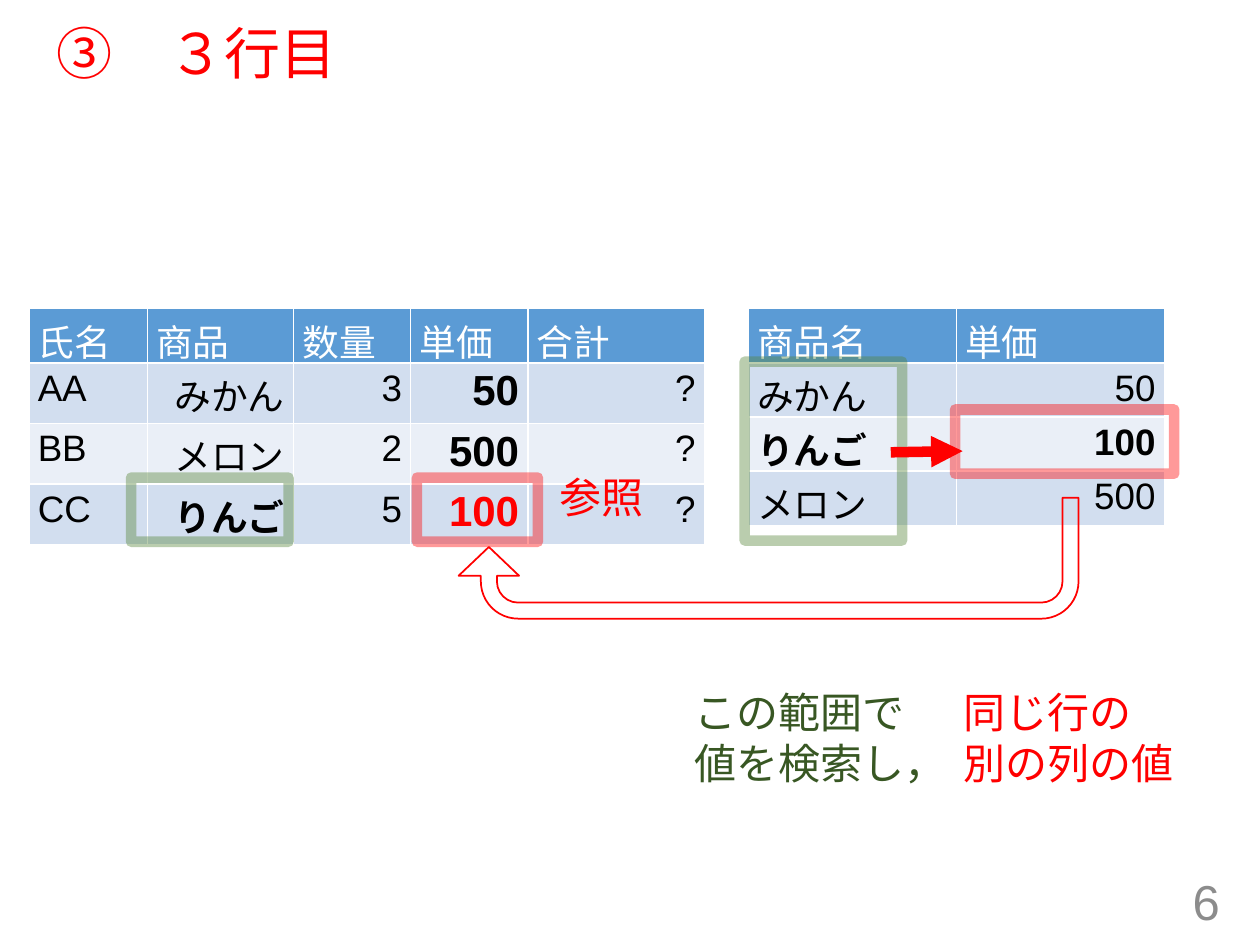
"""Build the slide that explains looking up a unit price for the third row."""
from dataclasses import dataclass

import lxml.etree
import pptx
import pptx.dml.color
import pptx.enum.shapes
import pptx.enum.text
import pptx.oxml.ns
import pptx.util

Inches = pptx.util.Inches
Align = pptx.enum.text.PP_ALIGN
Anchor = pptx.enum.text.MSO_ANCHOR
Shape = pptx.enum.shapes.MSO_SHAPE


@dataclass(frozen=True)
class Theme:
    """Colours and type sizes of the slide."""
    font: str = "Arial"
    red: str = "FF0000"
    green: str = "548235"
    dark_green: str = "385723"
    grey: str = "8C8C8C"
    black: str = "000000"
    white: str = "FFFFFF"
    header: str = "5B9BD5"
    bands: tuple[str, str] = ("D2DEEF", "EAEFF7")
    title: int = 32
    number: int = 28
    label: int = 24
    cell: int = 21


@dataclass(frozen=True)
class Area:
    """A rectangle in inches."""
    left: float
    top: float
    width: float
    height: float

    def lengths(self) -> tuple:
        """Return the position and size as lengths."""
        return tuple(Inches(v) for v in (self.left, self.top, self.width, self.height))


@dataclass(frozen=True)
class Grid:
    """A table with its measures and the cells that stand out."""
    left: float
    columns: tuple[float, ...]
    row_height: float
    rows: tuple[tuple[str, ...], ...]
    left_columns: tuple[int, ...]
    bold: tuple[tuple[int, int], ...]
    large_column: int | None = None
    red: tuple[tuple[int, int], ...] = ()


@dataclass(frozen=True)
class Frame:
    """A translucent outline that marks cells."""
    area: Area
    color: str


@dataclass(frozen=True)
class Label:
    """A text box, with one paragraph for each line."""
    area: Area
    text: str
    color: str


THEME = Theme()
TABLE_TOP = 2.45
HEADER_HEIGHT = 0.42

GRIDS = (
    Grid(5.94, (1.65, 1.65), 0.42,
         (("商品名", "単価"), ("みかん", "50"), ("りんご", "100"), ("メロン", "500")),
         left_columns=(0,), bold=((2, 0), (2, 1))),
    Grid(0.23, (0.94, 1.16, 0.93, 0.93, 1.4), 0.47,
         (("氏名", "商品", "数量", "単価", "合計"),
          ("AA", "みかん", "3", "50", "?"),
          ("BB", "メロン", "2", "500", "?"),
          ("CC", "りんご", "5", "100", "?")),
         left_columns=(0,), bold=((1, 3), (2, 3), (3, 3), (3, 1)),
         large_column=3, red=((3, 3),)),
)
FRAMES = (
    Frame(Area(7.58, 3.25, 1.74, 0.51), THEME.red),
    Frame(Area(3.31, 3.79, 0.96, 0.51), THEME.red),
    Frame(Area(1.04, 3.79, 1.25, 0.51), THEME.green),
    Frame(Area(5.91, 2.87, 1.25, 1.42), THEME.green),
)
LABELS = (
    Label(Area(5.41, 5.4, 2.22, 0.91), "この範囲で\n値を検索し，", THEME.dark_green),
    Label(Area(7.55, 5.4, 1.88, 0.91), "同じ行の\n別の列の値", THEME.red),
    Label(Area(4.34, 3.69, 0.88, 0.5), "参照", THEME.red),
)


def rgb(color: str) -> pptx.dml.color.RGBColor:
    """Return a colour object for a hex value."""
    return pptx.dml.color.RGBColor.from_string(color)


def write(frame, text: str, *, size: int, color: str, bold: bool = False,
          align=Align.LEFT, spacing: float | None = None) -> None:
    """Fill a text frame with formatted paragraphs."""
    frame.text = text
    for para in frame.paragraphs:
        para.alignment = align
        para.line_spacing = spacing
        for span in para.runs:
            span.font.name = THEME.font
            span.font.size = pptx.util.Pt(size)
            span.font.bold = bold
            span.font.color.rgb = rgb(color)


def child(parent, tag: str, **attributes: str):
    """Append a drawing element to its parent."""
    return lxml.etree.SubElement(parent, pptx.oxml.ns.qn(tag), **attributes)


def set_line(shape, color: str, width: float) -> None:
    """Give a shape or connector a solid line."""
    shape.line.color.rgb = rgb(color)
    shape.line.width = pptx.util.Pt(width)


def add_outline(page, kind, area: Area, color: str, width: float):
    """Add a preset shape that has a line and no fill."""
    shape = page.shapes.add_shape(kind, *area.lengths())
    shape.shadow.inherit = False
    shape.fill.background()
    set_line(shape, color, width)
    return shape


def add_grid(page, grid: Grid) -> None:
    """Draw a banded table."""
    height = HEADER_HEIGHT + grid.row_height * (len(grid.rows) - 1)
    area = Area(grid.left, TABLE_TOP, sum(grid.columns), height)
    table = page.shapes.add_table(len(grid.rows), len(grid.columns), *area.lengths()).table
    for column, width in zip(table.columns, grid.columns):
        column.width = Inches(width)
    for r, values in enumerate(grid.rows):
        table.rows[r].height = Inches(grid.row_height if r else HEADER_HEIGHT)
        for c, value in enumerate(values):
            cell = table.cell(r, c)
            cell.margin_left = cell.margin_right = Inches(0.07)
            cell.margin_top = cell.margin_bottom = Inches(0.04)
            cell.fill.solid()
            cell.fill.fore_color.rgb = rgb(THEME.bands[(r - 1) % 2] if r else THEME.header)
            body_color = THEME.red if (r, c) in grid.red else THEME.black
            write(cell.text_frame, value,
                  size=THEME.label if r and c == grid.large_column else THEME.cell,
                  color=body_color if r else THEME.white,
                  bold=(r, c) in grid.bold,
                  align=Align.RIGHT if r and c not in grid.left_columns else Align.LEFT)


def add_frame(page, frame: Frame) -> None:
    """Draw a translucent frame around cells."""
    shape = add_outline(page, Shape.RECTANGLE, frame.area, frame.color, 6)
    child(shape.line.fill.fore_color._xFill[0], "a:alpha", val="40000")


def add_arrows(page) -> None:
    """Draw the arrow along the row and the arrow back to the order table."""
    ends = (Inches(v) for v in (7.07, 3.59, 7.64, 3.58))
    arrow = page.shapes.add_connector(pptx.enum.shapes.MSO_CONNECTOR.STRAIGHT, *ends)
    set_line(arrow, THEME.red, 6)
    child(arrow.line._get_or_add_ln(), "a:tailEnd", type="triangle")
    child(arrow._element.spPr, "a:effectLst")
    turn = add_outline(page, Shape.U_TURN_ARROW, Area(3.64, 3.95, 4.92, 0.96), THEME.red, 1)
    turn.rotation = 180
    for index, value in enumerate((0.133, 0.25, 0.238, 0.308, 0.593)):
        turn.adjustments[index] = value


def add_text(page, area: Area, text: str, *, anchor=Anchor.TOP, wrap: bool = False,
             **style) -> None:
    """Add a text box."""
    frame = page.shapes.add_textbox(*area.lengths()).text_frame
    frame.word_wrap = wrap
    frame.vertical_anchor = anchor
    write(frame, text, **style)


def main() -> None:
    """Build and save the deck."""
    deck = pptx.Presentation()
    deck.slide_width, deck.slide_height = Inches(10), Inches(7.5)
    page = deck.slides.add_slide(deck.slide_layouts[5])
    title = page.shapes.title
    title.left, title.top, title.width, title.height = Area(0.35, 0.19, 9.25, 0.51).lengths()
    title.text_frame.vertical_anchor = Anchor.MIDDLE
    write(title.text_frame, "③\u3000３行目".replace("\u3000", "　"), size=THEME.title,
          color=THEME.red, spacing=0.9)
    add_text(page, Area(7.53, 6.95, 2.25, 0.4), "6", anchor=Anchor.MIDDLE, wrap=True,
             size=THEME.number, color=THEME.grey, align=Align.RIGHT)
    for grid in GRIDS:
        add_grid(page, grid)
    for frame in FRAMES:
        add_frame(page, frame)
    add_arrows(page)
    for label in LABELS:
        add_text(page, label.area, label.text, size=THEME.label, color=label.color)
    deck.save("out.pptx")


if __name__ == "__main__":
    main()
